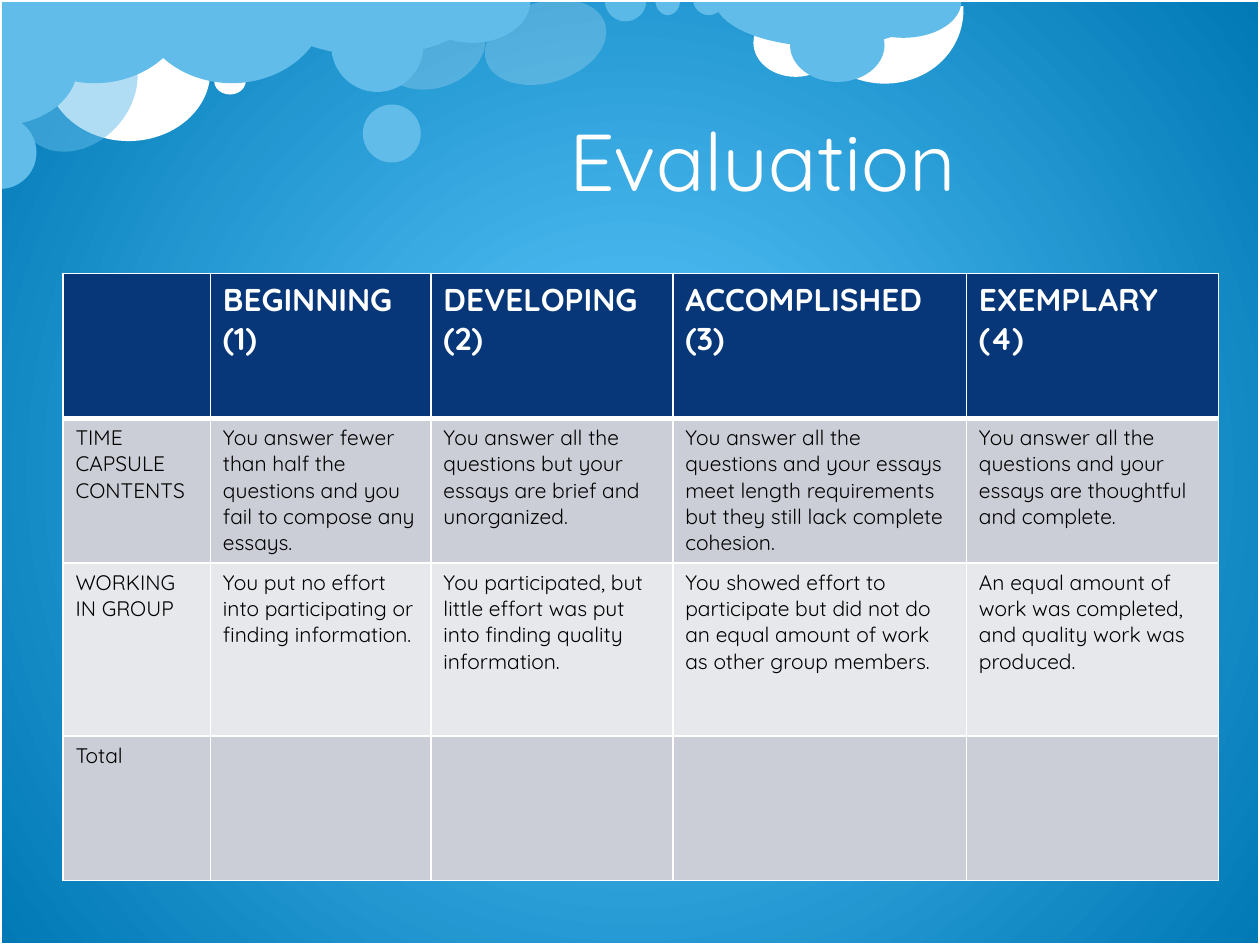
"""Build the Evaluation rubric slide with a cloudy sky."""
from typing import NamedTuple

from lxml.etree import SubElement
from pptx import Presentation
from pptx.dml.color import RGBColor
from pptx.enum.shapes import MSO_SHAPE as SHAPE
from pptx.enum.text import MSO_ANCHOR as ANCHOR, PP_ALIGN as ALIGN
from pptx.oxml import parse_xml
from pptx.oxml.ns import nsdecls, qn
from pptx.util import Inches, Pt

FONT = "Quicksand"
WHITE, SKY, PALE = "FFFFFF", "62BCE9", "8FD9FB"
NAVY, GREY, LIGHT = "073779", "CCCED7", "E7E8EC"
HALF, HALF_SMALL = (0, 108), (0, 107.77)


class Puff(NamedTuple):
    left: float
    top: float
    width: float
    height: float
    color: str = SKY
    kind: SHAPE = SHAPE.OVAL
    adj: tuple = ()
    rot: float = 0
    alpha: int = 100


def half(left: float, top: float, width: float, height: float,
         adj: tuple = HALF, **kw) -> Puff:
    return Puff(left, top, width, height, kind=SHAPE.PIE, adj=adj, **kw)


PUFFS = [
    Puff(3.11, -0.05, 0.64, 0.86, WHITE, rot=72.8, alpha=20),
    Puff(0.37, 0.01, 1.3, 1.11, WHITE),
    Puff(6.39, -0.6, 1.21, 1.31, WHITE, SHAPE.ARC, (151.8, 44.48), 106.5),
    Puff(5.98, 0.07, 0.67, 0.54, WHITE),
    half(-0.01, -0.66, 1.52, 1.32),
    half(2.08, -0.44, 1.75, 0.88),
    Puff(2.88, 0.83, 0.46, 0.46),
    Puff(0.19, 0.18, 0.85, 1.07, rot=41.8, alpha=50),
    half(-0.29, 0.92, 0.58, 0.58, HALF_SMALL, rot=270),
    Puff(1.7, 0.54, 0.25, 0.21, WHITE),
    half(1.08, -0.66, 1.52, 1.32),
    half(5.67, -0.38, 1.75, 0.75),
    Puff(6.27, 0.07, 0.75, 0.58),
    half(6.71, -0.28, 0.92, 0.58),
    Puff(4.01, -0.16, 0.64, 0.99, WHITE, rot=72.8, alpha=20),
    half(4.8, -0.16, 0.33, 0.33, HALF_SMALL, color=PALE, alpha=50),
    half(5.2, -0.13, 0.2, 0.25, HALF_SMALL),
    half(5.5, -0.13, 0.25, 0.25, HALF_SMALL),
    Puff(2.63, 0, 0.73, 0.73),
    half(3.29, -0.33, 0.92, 0.67),
    half(-0.47, -0.09, 0.93, 1.24, rot=270),
]

COLS = [1.17, 1.75, 1.92, 2.33, 2]
ROWS = [1.15, 1.15, 1.37, 1.15]
FILLS = [NAVY, GREY, LIGHT, GREY]
RUBRIC = [
    ["", "BEGINNING\n(1)", "DEVELOPING\n(2)", "ACCOMPLISHED\n(3)", "EXEMPLARY\n(4)"],
    ["TIME CAPSULE CONTENTS",
     "You answer fewer than half the questions and you fail to compose any essays.",
     "You answer all the questions but your essays are brief and unorganized.",
     "You answer all the questions and your essays meet length requirements "
     "but they still lack complete cohesion.",
     "You answer all the questions and your essays are thoughtful and complete."],
    ["WORKING IN GROUP",
     "You put no effort into participating or finding information.",
     "You participated, but little effort was put into finding quality information.",
     "You showed effort to participate but did not do an equal amount of work "
     "as other group members.",
     "An equal amount of work was completed, and quality work was produced."],
    ["Total", "", "", "", ""],
]


def rgb(color: str) -> RGBColor:
    return RGBColor.from_string(color)


def put_text(tf, text: str, *, size: float, color: str, bold: bool = False,
             spacing=None) -> None:
    for i, line in enumerate(text.split("\n")):
        p = tf.add_paragraph() if i else tf.paragraphs[0]
        p.alignment = ALIGN.LEFT
        p.line_spacing = spacing
        p.font.size = Pt(size)
        if line:
            r = p.add_run()
            r.text = line
            r.font.name, r.font.size, r.font.bold = FONT, Pt(size), bold
            r.font.color.rgb = rgb(color)


def paint_sky(s) -> None:
    fill = s.background.fill
    fill.gradient()
    for stop, color, pos in zip(fill.gradient_stops, ("5DC9FF", "0079B5"), (0, 1)):
        stop.color.rgb, stop.position = rgb(color), pos
    grad = s.element.find(".//" + qn("a:gradFill"))
    for lin in grad.findall(qn("a:lin")):
        grad.remove(lin)
    grad.append(parse_xml(
        f'<a:path {nsdecls("a")} path="circle">'
        '<a:fillToRect l="50000" t="50000" r="50000" b="50000"/></a:path>'))


def draw_puff(s, puff: Puff) -> None:
    sp = s.shapes.add_shape(puff.kind, *map(Inches, puff[:4]))
    sp.shadow.inherit = False
    sp.rotation = puff.rot
    for i, value in enumerate(puff.adj):
        sp.adjustments[i] = value
    sp.fill.solid()
    sp.fill.fore_color.rgb = rgb(puff.color)
    sp.line.fill.background()
    if puff.alpha < 100:
        clr = sp.element.find(".//" + qn("a:srgbClr"))
        SubElement(clr, qn("a:alpha"), val=str(puff.alpha * 1000))


def draw_frame(s, prs) -> None:
    sp = s.shapes.add_shape(SHAPE.RECTANGLE, 0, 0, prs.slide_width, prs.slide_height)
    sp.shadow.inherit = False
    sp.fill.background()
    sp.line.color.rgb, sp.line.width = rgb(WHITE), Pt(2)


def set_borders(cell, **widths: float) -> None:
    tc_pr = cell._tc.get_or_add_tcPr()
    for i, side in enumerate("LRTB"):
        tc_pr.insert(i, parse_xml(
            f'<a:ln{side} {nsdecls("a")} w="{Pt(widths.get(side, 1))}"><a:solidFill>'
            f'<a:srgbClr val="{WHITE}"/></a:solidFill></a:ln{side}>'))


def draw_table(s) -> None:
    table = s.shapes.add_table(len(ROWS), len(COLS), Inches(0.5), Inches(2.17),
                               Inches(sum(COLS)), Inches(sum(ROWS))).table
    for col, width in zip(table.columns, COLS):
        col.width = Inches(width)
    for i, (row, height) in enumerate(zip(table.rows, ROWS)):
        row.height = Inches(height)
        style = (dict(size=12, color="000000") if i
                 else dict(size=18, color=WHITE, bold=True))
        edges = {0: {"B": 3}, 1: {"T": 3}}.get(i, {})
        for cell, text in zip(row.cells, RUBRIC[i]):
            cell.fill.solid()
            cell.fill.fore_color.rgb = rgb(FILLS[i])
            set_borders(cell, **edges)
            put_text(cell.text_frame, text, **style)


def main() -> None:
    prs = Presentation()
    prs.slide_width, prs.slide_height = Inches(10), Inches(7.5)
    s = prs.slides.add_slide(prs.slide_layouts[5])
    paint_sky(s)
    for puff in PUFFS:
        draw_puff(s, puff)
    draw_frame(s, prs)
    title = s.shapes.title
    title.left, title.top, title.width, title.height = map(
        Inches, (4.42, 0.67, 3.75, 1.17))
    title.text_frame.vertical_anchor = ANCHOR.MIDDLE
    put_text(title.text_frame, "Evaluation", size=46, color=WHITE, spacing=Pt(56))
    s.shapes.element.append(title.element)
    draw_table(s)
    prs.save("out.pptx")


if __name__ == "__main__":
    main()
